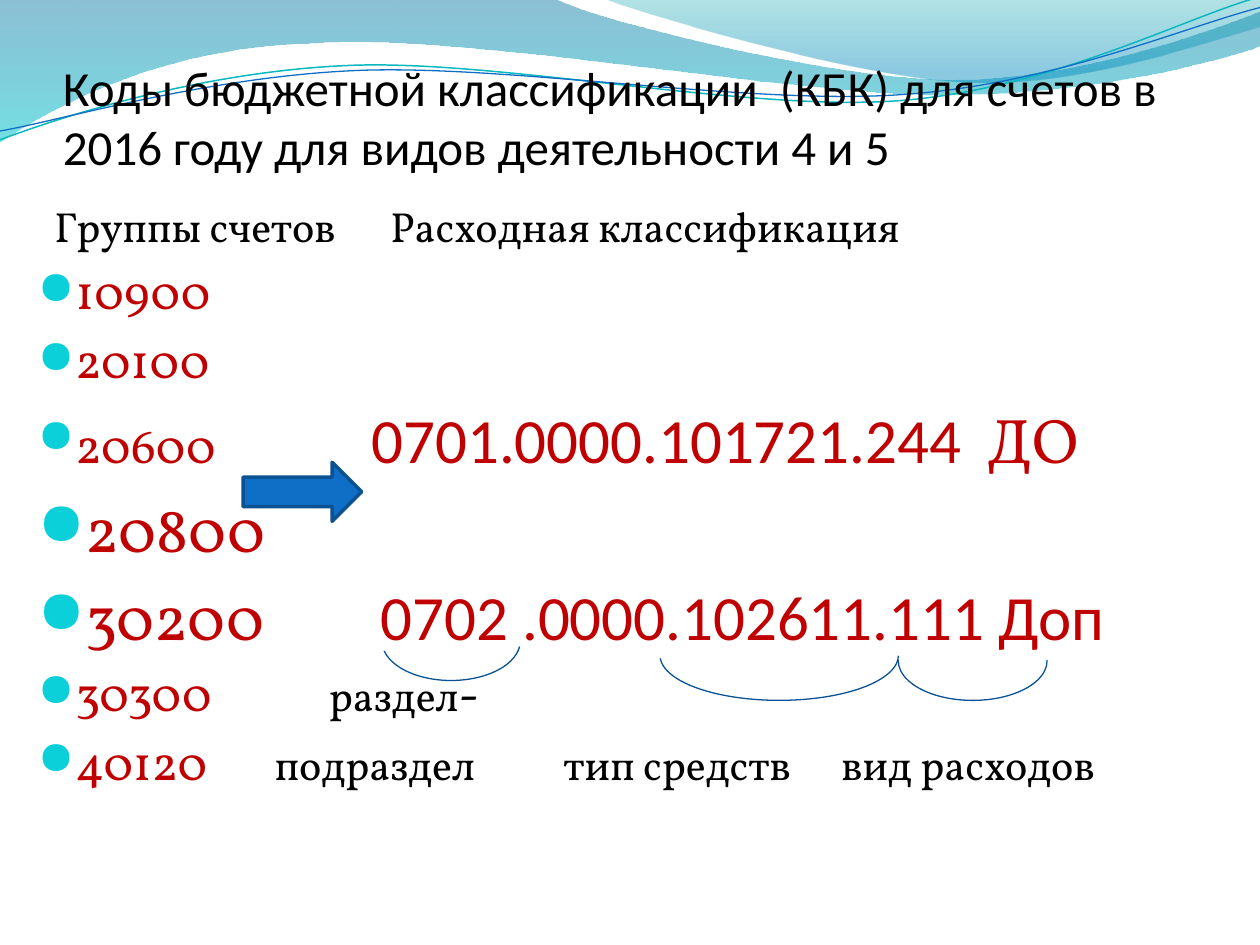
"""Build the slide on budget classification codes for accounts in 2016."""
from lxml import etree
from pptx import Presentation
from pptx.dml import color
from pptx.enum import shapes, text
from pptx.oxml import ns
from pptx.util import Cm, Pt

HUES = {"black": "000000", "red": "C00000", "bullet": "0BD0D9", "arc": "095295",
        "arrow": "0F6FC6", "edge": "0B5292", "teal": "0AB8BF"}


def rgb(hue):
    return color.RGBColor.from_string(hue)


def add(node, tag, **atts):
    return etree.SubElement(node, ns.qn(tag), **atts)


deck = Presentation()
deck.slide_width, deck.slide_height = Cm(25.4), Cm(19.05)
slide = deck.slides.add_slide(deck.slide_layouts[6])
pool = slide.shapes

waves = [
    ([(0, 0), [(4.4, -0.01)],
      [(4.76, 0.17), (6.64, 0.63), (7.58, 0.63)],
      [(8.53, 0.63), (9.58, 0.26), (10, 0.09)], [(10.01, 0.36)],
      [(9.83, 0.44), (8.7, 0.76), (7.46, 0.75)],
      [(6.22, 0.75), (3.82, 0.28), (2.57, 0.34)],
      [(1.29, 0.36), (0.46, 0.83), (-0.01, 1.13)]],
     [(0, "0074A1", 45), (1, "00C6CF", 55)], None),
    ([(4.79, -0.01), [(5.09, 0.11), (6.82, 0.62), (7.69, 0.65)],
      [(8.56, 0.69), (9.61, 0.32), (10, 0.21)], [(10, 0)]],
     [(0, "00A1A9", 30), (0.8, "008BBF", 45)], None),
    ([(0, 1.11), [(0.48, 0.93), (1.58, 0.57), (2.77, 0.52)],
      [(3.95, 0.47), (5.93, 0.89), (7.13, 0.8)],
      [(8.33, 0.71), (9.38, 0.15), (9.98, -0.02)]], None, ("teal", 0.85)),
    ([(0, 1.04), [(0.47, 0.96), (1.64, 0.61), (2.83, 0.56)],
      [(4.03, 0.51), (5.97, 0.84), (7.17, 0.75)],
      [(8.36, 0.67), (9.41, 0.21), (10, 0.06)]], None, ("arrow", 0.75)),
]
for (start, *parts), stops, line in waves:
    dots = [(Cm(x * 2.54), Cm(y * 2.54)) for x, y in [start, *sum(parts, [])]]
    build = pool.build_freeform(*dots[0])
    build.add_line_segments(dots[1:], close=bool(stops))
    wave = build.convert_to_shape()
    wave.shadow.inherit = False
    legs = iter(list(wave._element.spPr.iter(ns.qn("a:lnTo"))))
    for part in parts:
        group = [next(legs) for dot in part]
        if len(group) == 3:
            curve = etree.Element(ns.qn("a:cubicBezTo"))
            group[0].addprevious(curve)
            for leg in group:
                curve.append(leg[0])
                leg.getparent().remove(leg)
    if stops:
        wave.line.fill.background()
        wave.fill.gradient()
        wave.fill.gradient_angle = 270
        for stop, (place, hue, alpha) in zip(wave.fill.gradient_stops, stops):
            stop.position = place
            stop.color.rgb = rgb(hue)
        tints = wave._element.spPr.iter(ns.qn("a:srgbClr"))
        for tint, (place, hue, alpha) in zip(tints, stops):
            add(tint, "a:alpha", val=str(alpha * 1000))
    else:
        wave.fill.background()
        wave.line.color.rgb = rgb(HUES[line[0]])
        wave.line.width = Pt(line[1])

title = pool.add_textbox(Cm(1.27), Cm(0.74), Cm(22.86), Cm(2.79)).text_frame
title.word_wrap = True
title.vertical_anchor = text.MSO_ANCHOR.BOTTOM
title.margin_left = title.margin_right = title.margin_bottom = 0
para = title.paragraphs[0]
para.text = ("Коды бюджетной классификации  (КБК) для счетов в 2016 году "
             "для видов деятельности 4 и 5")
para.font.size, para.font.name = Pt(28), "Calibri"
para.font.color.rgb = rgb(HUES["black"])

serif, sans = "Vollkorn", "Calibri"
rows = [
    ([9.58], [("  Группы счетов\tРасходная классификация", 24, serif, "black")]),
    ([], [("10900", 28, serif, "red")]),
    ([], [("20100", 28, serif, "red")]),
    ([6.73], [("20600\t", 28, serif, "red"), ("0701.0000.101721.244", 36, sans, "red"),
              ("  ДО", 36, serif, "red")]),
    ([], [("20800", 36, serif, "red")]),
    ([6.91], [("30200\t", 36, serif, "red"),
              ("0702 .0000.102611.111 Доп", 36, sans, "red")]),
    ([5.87], [("30300\t", 28, serif, "red"), ("раздел", 24, serif, "black"),
              ("-", 28, serif, "black")]),
    ([4.78, 10.6, 16.2], [("40120\t", 28, serif, "red"),
                          ("подраздел\tтип средств\tвид расходов", 24, serif, "black")]),
]
body = pool.add_textbox(Cm(0.51), Cm(3.92), Cm(23.62), Cm(14.2)).text_frame
body.word_wrap = True
for i, (tabs, runs) in enumerate(rows):
    para = body.add_paragraph() if i else body.paragraphs[0]
    props = para._p.get_or_add_pPr()
    props.set("marL", str(Cm(0.76)))
    props.set("indent", str(Cm(-0.76)))
    add(add(props, "a:spcBef"), "a:spcPct", val="20000")
    if i:
        add(add(props, "a:buClr"), "a:srgbClr", val=HUES["bullet"])
        add(props, "a:buSzPct", val="95000")
        add(props, "a:buFont", typeface="OpenSymbol")
        add(props, "a:buChar", char="●")
    else:
        add(props, "a:buNone")
    if tabs:
        stops = add(props, "a:tabLst")
        for tab in tabs:
            add(stops, "a:tab", pos=str(Cm(tab)), algn="l")
    for words, size, face, hue in runs:
        run = para.add_run()
        run.text = words
        run.font.size, run.font.name = Pt(size), face
        run.font.color.rgb = rgb(HUES[hue])

arcs = [((7.7, 12.12, 2.79, 1.6), (2.85, 102.82)),
        ((13.31, 12.32, 4.8, 1.8), (0.01, 107.24)),
        ((18.11, 12.52, 3, 1.6), (215.66, 108.51))]
for box, turns in arcs:
    arc = pool.add_shape(shapes.MSO_SHAPE.ARC, *map(Cm, box))
    arc.shadow.inherit = False
    arc.adjustments[0], arc.adjustments[1] = turns
    arc.fill.background()
    arc.line.color.rgb = rgb(HUES["arc"])
    arc.line.width = Pt(0.75)

arrow = pool.add_shape(shapes.MSO_SHAPE.RIGHT_ARROW, Cm(4.9), Cm(9.32), Cm(2.39), Cm(1.19))
arrow.shadow.inherit = False
arrow.fill.solid()
arrow.fill.fore_color.rgb = rgb(HUES["arrow"])
arrow.line.color.rgb = rgb(HUES["edge"])
arrow.line.width = Pt(2)

deck.save("out.pptx")
